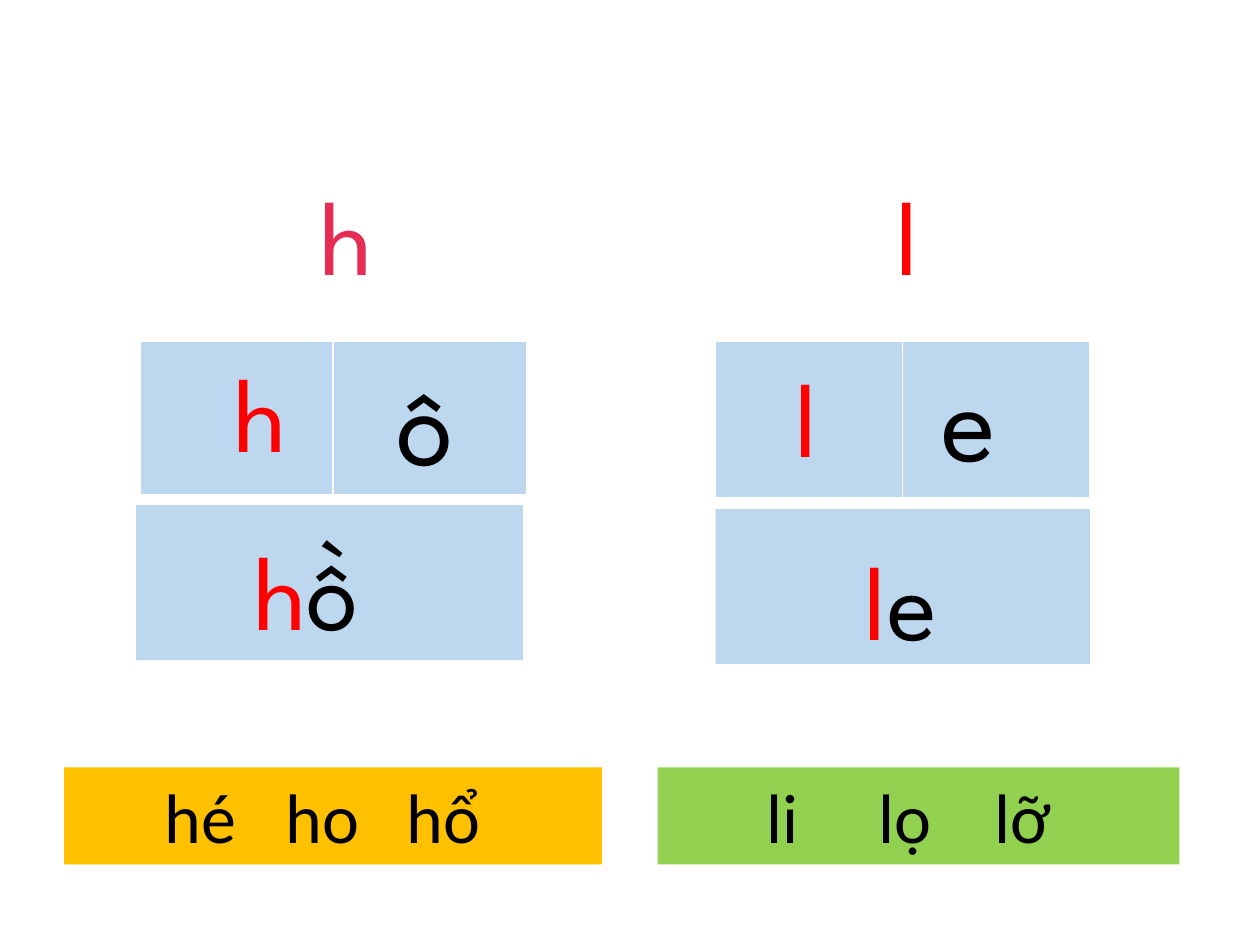
from lxml import etree
from pptx import Presentation
from pptx.dml.color import RGBColor
from pptx.enum.shapes import MSO_SHAPE
from pptx.enum.text import MSO_ANCHOR, MSO_AUTO_SIZE, PP_ALIGN
from pptx.oxml.ns import qn
from pptx.util import Inches, Pt

RECT = MSO_SHAPE.RECTANGLE
MIDDLE = MSO_ANCHOR.MIDDLE
GROW = MSO_AUTO_SIZE.SHAPE_TO_FIT_TEXT
CENTER = PP_ALIGN.CENTER
LEFT = PP_ALIGN.LEFT
BLUE, RED, PINK, BLACK, WHITE = "BDD7EE", "FF0000", "E52D56", "000000", "FFFFFF"
BORDERS = {"a:lnL": 1, "a:lnR": 1, "a:lnT": 1, "a:lnB": 3}


def color(code):
    return RGBColor.from_string(code)


def place(box):
    return [Inches(n) for n in box]


def add_rect(slide, box, fill):
    rect = slide.shapes.add_shape(RECT, *place(box))
    rect.shadow.inherit = False
    rect.fill.solid()
    rect.fill.fore_color.rgb = color(fill)
    rect.line.fill.background()
    return rect


def add_border(cell):
    props = cell._tc.get_or_add_tcPr()
    for tag, width in BORDERS.items():
        line = etree.SubElement(props, qn(tag), w=str(Pt(width)))
        fill = etree.SubElement(line, qn("a:solidFill"))
        etree.SubElement(fill, qn("a:srgbClr"), val=WHITE)


def add_pair(slide, box):
    table = slide.shapes.add_table(1, 2, *place(box)).table
    for col in table.columns:
        col.width = Inches(box[2] / 2)
    for cell in table.iter_cells():
        add_border(cell)
        cell.fill.solid()
        cell.fill.fore_color.rgb = color(BLUE)


def add_text(slide, box, parts, size=60):
    frame = slide.shapes.add_textbox(*place(box)).text_frame
    frame.word_wrap = True
    frame.auto_size = GROW
    para = frame.paragraphs[0]
    para.alignment = CENTER
    para.font.name = "League Spartan"
    para.font.size = Pt(size)
    for text, code in parts:
        run = para.add_run()
        run.text = text
        run.font.color.rgb = color(code)


def add_bar(slide, box, fill, words, inset, stops):
    frame = add_rect(slide, box, fill).text_frame
    frame.word_wrap = True
    frame.auto_size = GROW
    frame.vertical_anchor = MIDDLE
    frame.margin_left = Inches(inset)
    para = frame.paragraphs[0]
    para.text = "\t".join(words)
    para.alignment = LEFT
    tabs = etree.SubElement(para._p.get_or_add_pPr(), qn("a:tabLst"))
    for stop in stops:
        etree.SubElement(tabs, qn("a:tab"), pos=str(Inches(stop)), algn="l")
    para.font.name = "Calibri"
    para.font.size = Pt(40)
    para.font.color.rgb = color(BLACK)


def main():
    deck = Presentation()
    deck.slide_width, deck.slide_height = Inches(10), Inches(7.5)
    slide = deck.slides.add_slide(deck.slide_layouts[6])

    add_pair(slide, (1.11, 2.71, 3.07, 1.23))
    add_rect(slide, (1.08, 4.01, 3.07, 1.23), BLUE)
    add_pair(slide, (5.68, 2.71, 2.97, 1.25))
    add_rect(slide, (5.68, 4.04, 2.97, 1.23), BLUE)

    add_text(slide, (2.85, 2.73, 1.06, 1.51), [("ô", BLACK)], 66)
    add_text(slide, (7.16, 2.7, 1.06, 1.51), [("e", BLACK)], 66)
    for left, top, width, parts in (
        (1.32, 2.71, 1.5, [("h", RED)]),
        (1.68, 4.12, 1.5, [("h", RED), ("ồ", BLACK)]),
        (6.4, 4.2, 1.5, [("l", RED), ("e", BLACK)]),
        (5.65, 2.75, 1.5, [("l", RED)]),
        (2.1, 1.3, 1.3, [("h", PINK)]),
        (6.45, 1.3, 1.5, [("l", RED)]),
    ):
        add_text(slide, (left, top, width, 1.41), parts)

    add_bar(slide, (0.51, 6.09, 4.27, 0.77), "FFC000",
            ("hé", "ho", "hổ"), 0.8, (0.96, 1.92))
    add_bar(slide, (5.22, 6.09, 4.14, 0.77), "92D050",
            ("li", "lọ", "lỡ"), 0.86, (0.89, 1.81))
    deck.save("out.pptx")


if __name__ == "__main__":
    main()
